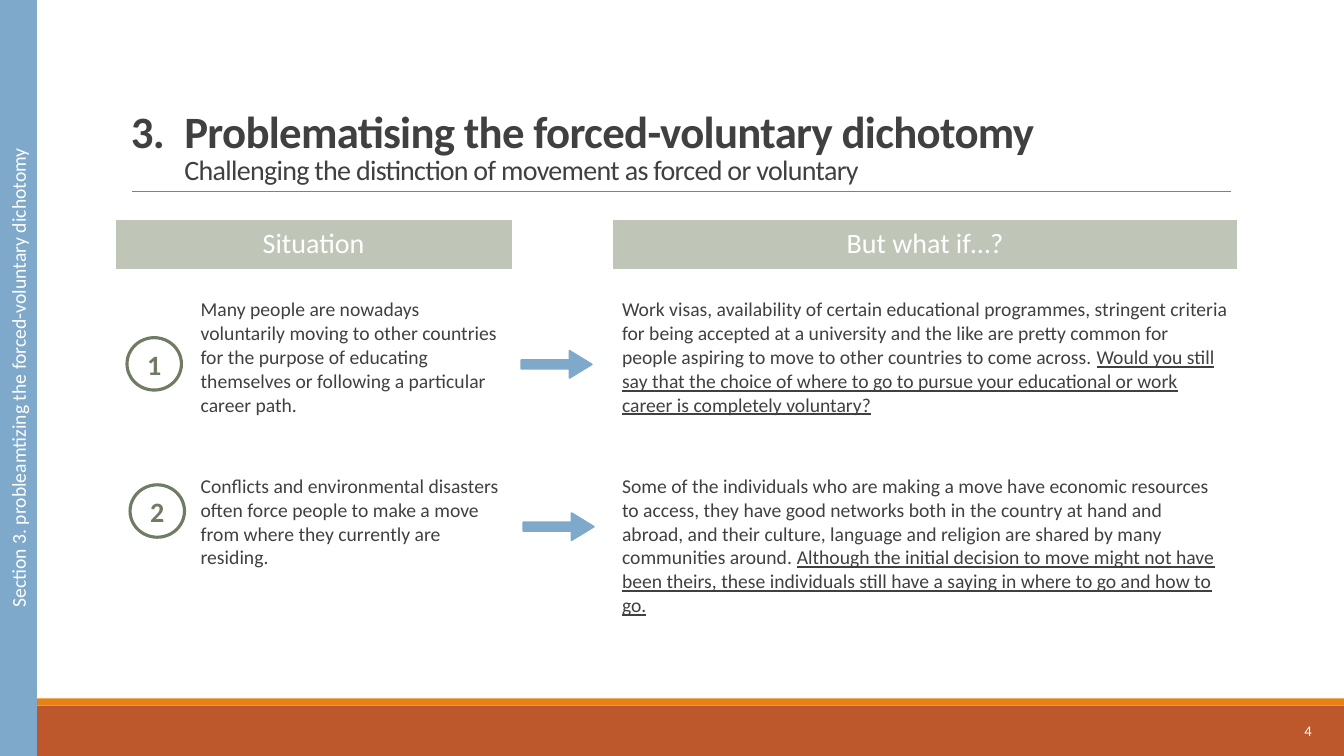
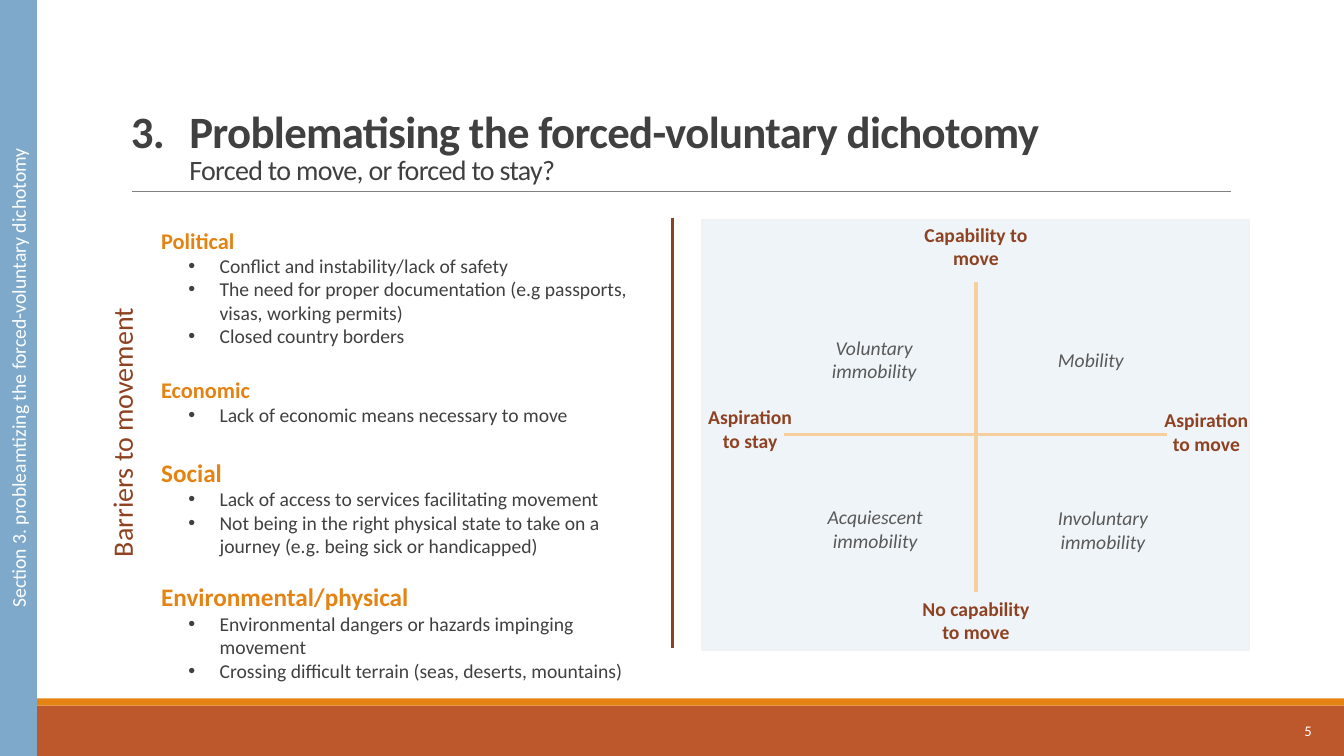
from lxml import etree
from pptx import Presentation
from pptx import util as u
from pptx.dml.color import RGBColor
from pptx.enum import shapes, text
from pptx.oxml import ns

Inches, Pt = u.Inches, u.Pt
FONT = "Calibri"
COLORS = {
    "white": "FFFFFF", "body": "404040", "muted": "595959", "rule": "808080",
    "rust": "BD582C", "orange": "E48312", "peach": "F7CE9D", "brown": "8E4221",
    "blue": "7EA9CA", "pale_blue": "EEF4F8", "panel_edge": "F2F2F2",
    "sage": "BFC6B8", "green": "6F7B63",
}
SECTION = "Section 3. probleamtizing the forced-voluntary dichotomy"
TITLE = "Problematising the forced-voluntary dichotomy"

CASES = [
    ("Many people are nowadays voluntarily moving to other countries for the purpose of "
     "educating themselves or following a particular career path.",
     "Work visas, availability of certain educational programmes, stringent criteria for being "
     "accepted at a university and the like are pretty common for people aspiring to move to "
     "other countries to come across. ",
     "Would you still say that the choice of where to go to pursue your educational or work "
     "career is completely voluntary?"),
    ("Conflicts and environmental disasters often force people to make a move from where they "
     "currently are residing.",
     "Some of the individuals who are making a move have economic resources to access, they have "
     "good networks both in the country at hand and abroad, and their culture, language and "
     "religion are shared by many communities around. ",
     "Although the initial decision to move might not have been theirs, these individuals still "
     "have a saying in where to go and how to go."),
]

# heading, heading size, space before, bullets
BARRIERS = [
    ("Political", 16, 0, ["Conflict and instability/lack of safety",
                          "The need for proper documentation (e.g passports, visas, working permits)",
                          "Closed country borders"]),
    ("Economic", 16, 20, ["Lack of economic means necessary to move"]),
    ("Social", 18, 22, ["Lack of access to services facilitating movement",
                        "Not being in the right physical state to take on a journey "
                        "(e.g. being sick or handicapped)"]),
    ("Environmental/physical", 18, 17, ["Environmental dangers or hazards impinging movement",
                                        "Crossing difficult terrain (seas, deserts, mountains)"]),
]

QUADRANTS = [
    ("Voluntary immobility", 7.86, 3.28), ("Mobility", 10.01, 3.4),
    ("Acquiescent immobility", 7.87, 4.96), ("Involuntary immobility", 10.13, 4.97),
]


def rgb(name):
    return RGBColor.from_string(COLORS[name])


def add_run(paragraph, words, size, color="body", bold=False, italic=False, underline=False):
    run = paragraph.add_run()
    run.text = words
    font = run.font
    font.name, font.size, font.bold = FONT, Pt(size), bold
    font.italic, font.underline = italic, underline
    font.color.rgb = rgb(color)
    return run


def set_indent(paragraph, left, hanging, bullet=None):
    properties = paragraph._p.get_or_add_pPr()
    properties.set("marL", str(Inches(left)))
    properties.set("indent", str(-Inches(hanging)))
    if bullet:
        etree.SubElement(properties, ns.qn("a:buFont")).set("typeface", "Arial")
        etree.SubElement(properties, ns.qn("a:buChar")).set("char", bullet)


def add_box(slide, kind, left, top, width, height, fill=None, line=None, weight=1.25):
    shape = slide.shapes.add_shape(kind, *map(Inches, (left, top, width, height)))
    shape.shadow.inherit = False
    if fill:
        shape.fill.solid()
        shape.fill.fore_color.rgb = rgb(fill)
    else:
        shape.fill.background()
    if line:
        shape.line.color.rgb = rgb(line)
        shape.line.width = Pt(weight)
    else:
        shape.line.fill.background()
    return shape


def add_line(slide, start, end, color, weight):
    connector = slide.shapes.add_connector(
        shapes.MSO_CONNECTOR.STRAIGHT, *map(Inches, start + end))
    connector.line.color.rgb = rgb(color)
    connector.line.width = Pt(weight)
    etree.SubElement(connector._element.spPr, ns.qn("a:effectLst"))
    return connector


def add_text_box(slide, left, top, width, height, anchor=text.MSO_ANCHOR.TOP):
    box = slide.shapes.add_textbox(*map(Inches, (left, top, width, height)))
    box.text_frame.word_wrap = True
    box.text_frame.vertical_anchor = anchor
    return box


def add_label(slide, words, left, top, width, height=0.57, size=14, color="brown", **style):
    box = add_text_box(slide, left, top, width, height)
    paragraph = box.text_frame.paragraphs[0]
    paragraph.alignment = text.PP_ALIGN.CENTER
    add_run(paragraph, words, size, color, **style)
    return box


def fill_centred(frame, words, size, color, bold=False):
    frame.vertical_anchor = text.MSO_ANCHOR.MIDDLE
    paragraph = frame.paragraphs[0]
    paragraph.alignment = text.PP_ALIGN.CENTER
    add_run(paragraph, words, size, color, bold)


def add_title(slide, subtitle, indent):
    box = add_text_box(slide, 1.2, 0.31, 11, 1.59, text.MSO_ANCHOR.BOTTOM)
    paragraph = box.text_frame.paragraphs[0]
    set_indent(paragraph, indent, indent)
    paragraph.line_spacing = 0.85
    heading = add_run(paragraph, "3.\t" + TITLE, 32, bold=True)
    paragraph.add_line_break()
    for run in (heading, add_run(paragraph, subtitle, 20)):
        run.font._element.set("spc", "-50")


def add_framed_slide(presentation, number, subtitle, indent):
    """Add a slide with the bands, title, page number and section strip."""
    slide = presentation.slides.add_slide(presentation.slide_layouts[6])
    rectangle = shapes.MSO_SHAPE.RECTANGLE
    add_box(slide, rectangle, 0, 7, 13.33, 0.5, "rust")
    add_box(slide, rectangle, 0, 6.93, 13.33, 0.07, "orange")
    add_line(slide, (1.31, 1.9), (12.21, 1.9), "rule", 0.5)
    add_title(slide, subtitle, indent)

    page = add_text_box(slide, 11.68, 7.05, 1.43, 0.4, text.MSO_ANCHOR.MIDDLE)
    paragraph = page.text_frame.paragraphs[0]
    paragraph.alignment = text.PP_ALIGN.RIGHT
    add_run(paragraph, str(number), 10.5, "white")

    strip = add_box(slide, rectangle, 0, 0, 0.36, 7.5, "blue", "blue")
    strip.text_frame._txBody.bodyPr.set("vert", "vert270")
    fill_centred(strip.text_frame, SECTION, 14, "white")
    return slide


def add_case_table(slide):
    widths, heights = [0.75, 3.19, 0.99, 6.21], [0.49, 1.75, 1.75, 0.74]
    table = slide.shapes.add_table(
        len(heights), len(widths), Inches(1.14), Inches(2.18),
        Inches(sum(widths)), Inches(sum(heights))).table
    table.first_row = table.horz_banding = False
    for column, width in zip(table.columns, widths):
        column.width = Inches(width)
    for row, height in zip(table.rows, heights):
        row.height = Inches(height)
    for cell in table.iter_cells():
        cell.fill.background()

    table.cell(0, 0).merge(table.cell(0, 1))
    for column, heading in ((0, "Situation"), (3, "But what if…?")):
        cell = table.cell(0, column)
        cell.fill.solid()
        cell.fill.fore_color.rgb = rgb("sage")
        cell.vertical_anchor = text.MSO_ANCHOR.MIDDLE
        paragraph = cell.text_frame.paragraphs[0]
        paragraph.alignment = text.PP_ALIGN.CENTER
        add_run(paragraph, heading, 20, "white")

    for row, (situation, context, question) in enumerate(CASES, 1):
        for column, words in ((1, situation), (3, context)):
            cell = table.cell(row, column)
            cell.margin_top = Inches(0.29)
            add_run(cell.text_frame.paragraphs[0], words, 14)
        add_run(table.cell(row, 3).text_frame.paragraphs[0], question, 14, underline=True)


def add_arrow(slide, left, top):
    arrow = add_box(slide, shapes.MSO_SHAPE.RIGHT_ARROW, left, top, 0.7, 0.27, "blue", "blue")
    arrow.adjustments[0], arrow.adjustments[1] = 0.32, 0.82


def add_badge(slide, number, left, top):
    badge = add_box(slide, shapes.MSO_SHAPE.OVAL, left, top, 0.54, 0.52, None, "green", 2.25)
    frame = badge.text_frame
    frame.margin_left = frame.margin_right = frame.margin_top = frame.margin_bottom = 0
    fill_centred(frame, str(number), 20, "green", bold=True)


def add_barrier_list(slide):
    frame = add_text_box(slide, 1.5, 2.2, 5.13, 4.64).text_frame
    for index, (heading, size, gap, bullets) in enumerate(BARRIERS):
        paragraph = frame.add_paragraph() if index else frame.paragraphs[0]
        if gap:
            paragraph.space_before = Pt(gap)
        add_run(paragraph, heading, size, "orange", bold=True)
        for words in bullets:
            paragraph = frame.add_paragraph()
            set_indent(paragraph, 0.58, 0.31, "•")
            add_run(paragraph, words, 14)


def add_mobility_map(slide):
    add_box(slide, shapes.MSO_SHAPE.RECTANGLE, 6.96, 2.18, 5.43, 4.27, "pale_blue", "panel_edge")
    vertical_axis = add_line(slide, (9.68, 2.8), (9.68, 5.88), "peach", 2.25)
    add_line(slide, (11.57, 4.31), (7.78, 4.31), "peach", 2.25)
    add_label(slide, "Capability to move", 8.87, 2.16, 1.62, bold=True)
    bottom = add_label(slide, "No capability to move", 8.96, 5.87, 1.44, bold=True)
    vertical_axis.end_connect(bottom, 0)
    add_label(slide, "Aspiration to move", 11.41, 4, 1.11, bold=True)
    add_label(slide, "Aspiration to stay", 6.92, 3.97, 1.04, bold=True)
    for words, left, top in QUADRANTS:
        add_label(slide, words, left, top, 1.62, color="muted", italic=True)


def build_situations(presentation):
    slide = add_framed_slide(
        presentation, 4, "Challenging the distinction of movement as forced or voluntary", 0.53)
    add_case_table(slide)
    add_arrow(slide, 5.17, 3.48)
    add_arrow(slide, 5.19, 5.09)
    add_badge(slide, 1, 1.26, 3.35)
    add_badge(slide, 2, 1.29, 4.81)


def build_barriers(presentation):
    slide = add_framed_slide(presentation, 5, "Forced to move, or forced to stay?", 0.58)
    add_line(slide, (6.67, 2.16), (6.67, 6.43), "brown", 2.25)
    add_mobility_map(slide)
    side_label = add_label(slide, "Barriers to movement", -0.92, 4.07, 4.26, 0.44, size=20)
    side_label.rotation = 270
    add_barrier_list(slide)


def main():
    presentation = Presentation()
    presentation.slide_width, presentation.slide_height = Inches(13.33), Inches(7.5)
    build_situations(presentation)
    build_barriers(presentation)
    presentation.save("out.pptx")


if __name__ == "__main__":
    main()
